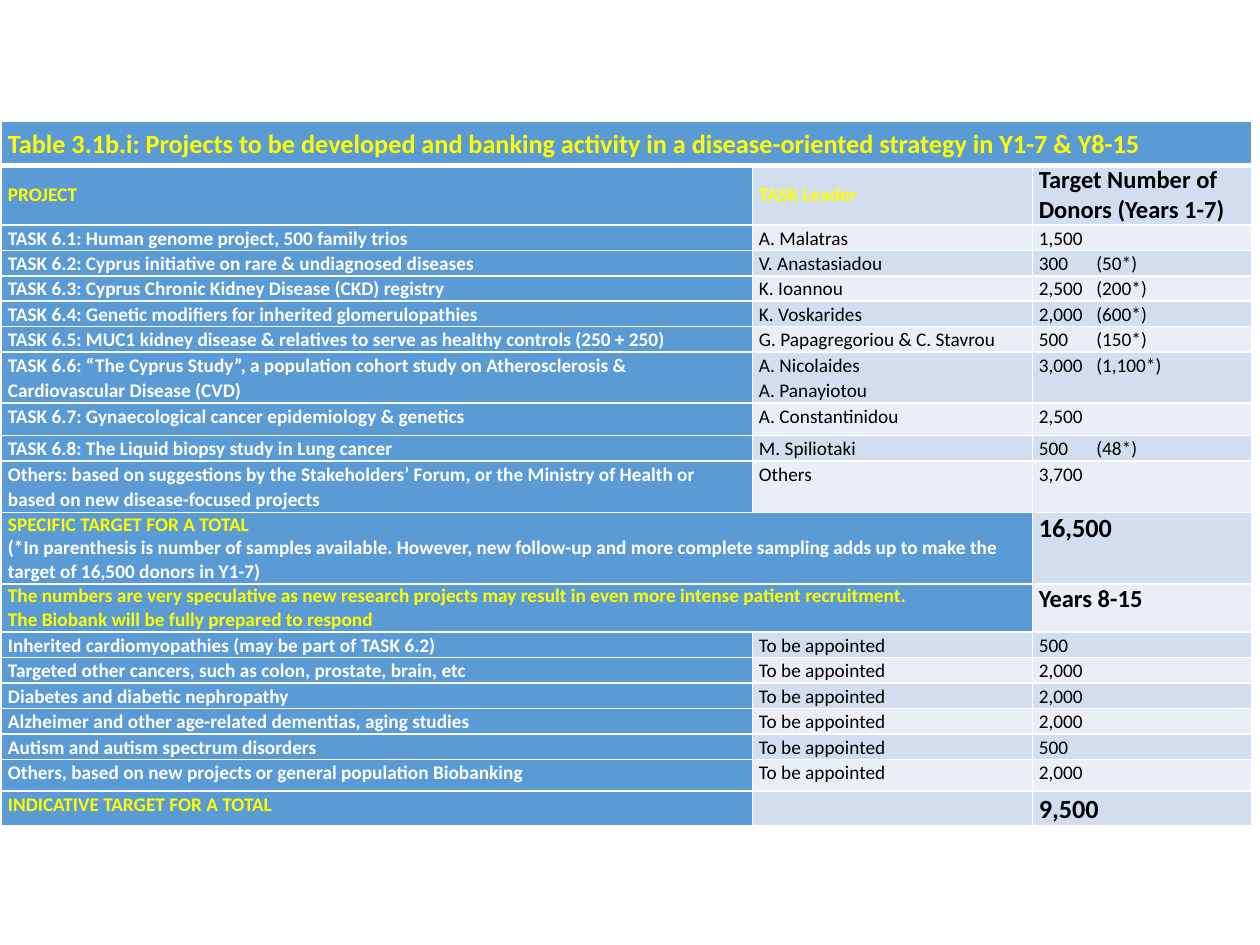
from dataclasses import dataclass

from lxml import etree
from pptx import Presentation
from pptx import util as u
from pptx.dml import color
from pptx.enum import text
from pptx.oxml import ns


@dataclass(frozen=True)
class Theme:
    font: str = "Calibri"
    blue: str = "5B9BD5"
    dark_band: str = "D2DEEF"
    light_band: str = "EAEFF7"
    white: str = "FFFFFF"
    yellow: str = "FFFF00"
    black: str = "000000"
    body: int = 11
    heading: int = 14
    total: int = 15


theme = Theme()
title = (theme.total, theme.yellow, True)
label = (theme.body, theme.yellow, True)
project = (theme.body, theme.white, True)
plain = (theme.body, theme.black, False)
heading = (theme.heading, theme.black, True)
total = (theme.total, theme.black, True)


def add_border(cell, side, points):
    line = etree.SubElement(cell._tc.get_or_add_tcPr(), ns.qn(f"a:ln{side}"), w=str(u.Pt(points)))
    fill = etree.SubElement(line, ns.qn("a:solidFill"))
    etree.SubElement(fill, ns.qn("a:srgbClr"), val=theme.white)


def write_cell(cell, content, style, spacing):
    lines = content.split("\n")
    for number, line in enumerate(lines):
        paragraph = cell.text_frame.paragraphs[0] if number == 0 else cell.text_frame.add_paragraph()
        size, ink, bold = style[number] if isinstance(style, list) else style
        if not line:
            etree.SubElement(paragraph._p, ns.qn("a:endParaRPr"), sz=str(size * 100))
            continue
        paragraph.line_spacing = spacing
        if "\t" in line:
            stops = etree.SubElement(paragraph._p.get_or_add_pPr(), ns.qn("a:tabLst"))
            etree.SubElement(stops, ns.qn("a:tab"), pos=str(u.Cm(1.16)), algn="l")
        run = paragraph.add_run()
        run.text = line
        run.font.name = theme.font
        run.font.size = u.Pt(size)
        run.font.bold = bold
        run.font.color.rgb = color.RGBColor.from_string(ink)


task_styles = (project, plain, plain)
rows = [
    (0.89, ("Table 3.1b.i: Projects to be developed and banking activity in a disease-oriented strategy in Y1-7 & Y8-15", "", ""), (title, plain, plain)),
    (1.14, ("PROJECT", "TASK Leader", "Target Number of Donors (Years 1-7)"), (label, label, heading)),
    (0.48, ("TASK 6.1: Human genome project, 500 family trios", "A. Malatras", "1,500"), task_styles),
    (0.48, ("TASK 6.2: Cyprus initiative on rare & undiagnosed diseases", "V. Anastasiadou", "300\t(50*)"), task_styles),
    (0.48, ("TASK 6.3: Cyprus Chronic Kidney Disease (CKD) registry", "K. Ioannou", "2,500\t(200*)"), task_styles),
    (0.48, ("TASK 6.4: Genetic modifiers for inherited glomerulopathies", "K. Voskarides", "2,000\t(600*)"), task_styles),
    (0.5, ("TASK 6.5: MUC1 kidney disease & relatives to serve as healthy controls (250 + 250)", "G. Papagregoriou & C. Stavrou", "500\t(150*)"), task_styles),
    (0.99, ("TASK 6.6: “The Cyprus Study”, a population cohort study on Atherosclerosis & Cardiovascular Disease (CVD)", "A. Nicolaides\nA. Panayiotou", "3,000\t(1,100*)"), task_styles),
    (0.66, ("TASK 6.7: Gynaecological cancer epidemiology & genetics", "A. Constantinidou", "2,500"), task_styles),
    (0.48, ("TASK 6.8: The Liquid biopsy study in Lung cancer", "M. Spiliotaki", "500\t(48*)"), task_styles),
    (1.04, ("Others: based on suggestions by the Stakeholders’ Forum, or the Ministry of Health or based on new disease-focused projects", "Others", "3,700"), task_styles),
    (1.42, ("SPECIFIC TARGET FOR A TOTAL\n(*In parenthesis is number of samples available. However, new follow-up and more complete sampling adds up to make the target of 16,500 donors in Y1-7)", "", "16,500"), ([label, project], plain, total)),
    (0.97, ("The numbers are very speculative as new research projects may result in even more intense patient recruitment.\nThe Biobank will be fully prepared to respond", "", "Years 8-15"), (label, plain, heading)),
    (0.48, ("Inherited cardiomyopathies (may be part of TASK 6.2)", "To be appointed", "500"), task_styles),
    (0.48, ("Targeted other cancers, such as colon, prostate, brain, etc", "To be appointed", "2,000"), task_styles),
    (0.48, ("Diabetes and diabetic nephropathy", "To be appointed", "2,000"), task_styles),
    (0.48, ("Alzheimer and other age-related dementias, aging studies", "To be appointed", "2,000"), task_styles),
    (0.48, ("Autism and autism spectrum disorders", "To be appointed", "500"), task_styles),
    (0.64, ("Others, based on new projects or general population Biobanking", "To be appointed", "2,000"), task_styles),
    (0.66, ("INDICATIVE TARGET FOR A TOTAL", "", "9,500"), (label, plain, total)),
]
column_widths = (15.14, 5.64, 4.42)
merged_to = {0: 2, 11: 1, 12: 1}
single_spaced = (1, 11, 12)

deck = Presentation()
deck.slide_width, deck.slide_height = u.Cm(25.4), u.Cm(19.05)
slide = deck.slides.add_slide(deck.slide_layouts[6])
height = sum(row[0] for row in rows)
projects = slide.shapes.add_table(
    len(rows), len(column_widths), u.Cm(0.03), u.Cm(2.44), u.Cm(sum(column_widths)), u.Cm(height)
).table
for column, width in zip(projects.columns, column_widths):
    column.width = u.Cm(width)

for r, (row_height, contents, styles) in enumerate(rows):
    projects.rows[r].height = u.Cm(row_height)
    for c, (content, style) in enumerate(zip(contents, styles)):
        cell = projects.cell(r, c)
        cell.margin_left = cell.margin_right = u.Cm(0.13)
        cell.margin_top = cell.margin_bottom = 0
        cell.vertical_anchor = text.MSO_ANCHOR.MIDDLE if r < 2 else text.MSO_ANCHOR.TOP
        for side in "LRTB":
            add_border(cell, side, 3 if (r, side) in ((0, "B"), (1, "T")) else 1)
        band = theme.dark_band if r % 2 else theme.light_band
        cell.fill.solid()
        cell.fill.fore_color.rgb = color.RGBColor.from_string(theme.blue if r == 0 or c == 0 else band)
        write_cell(cell, content, style, 1 if r in single_spaced else 1.07)

for r, last in merged_to.items():
    projects.cell(r, 0).merge(projects.cell(r, last))

deck.save("out.pptx")
